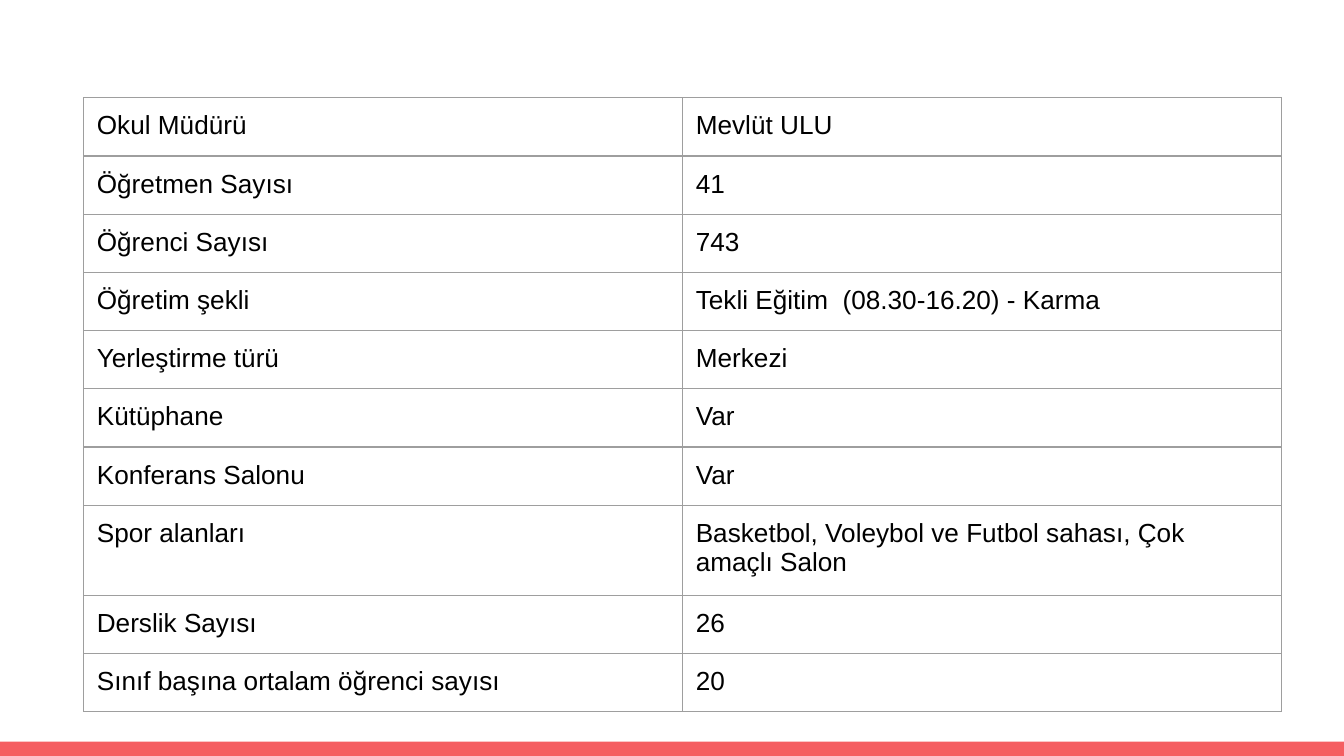
from lxml.etree import SubElement
from pptx import Presentation
from pptx.dml.color import RGBColor
from pptx.enum.shapes import MSO_SHAPE as Shape
from pptx.oxml.ns import qn
from pptx.util import Cm, Pt

WHITE = RGBColor(0xFF, 0xFF, 0xFF)
BLACK = RGBColor(0x00, 0x00, 0x00)
CORAL = RGBColor(0xF5, 0x5E, 0x61)
GRAY = RGBColor(0x9E, 0x9E, 0x9E)

SCHOOL_FACTS = [
    ("Okul Müdürü", "Mevlüt ULU"),
    ("Öğretmen Sayısı", "41"),
    ("Öğrenci Sayısı", "743"),
    ("Öğretim şekli", "Tekli Eğitim  (08.30-16.20) - Karma"),
    ("Yerleştirme türü", "Merkezi"),
    ("Kütüphane", "Var"),
    ("Konferans Salonu", "Var"),
    ("Spor alanları", "Basketbol, Voleybol ve Futbol sahası, Çok amaçlı Salon"),
    ("Derslik Sayısı", "26"),
    ("Sınıf başına ortalam öğrenci sayısı", "20"),
]
TALL_ROW = 7


class SlideBuilder:
    font_name = "Arial"
    font_size = Pt(14)
    cell_margin = Cm(0.25)
    border_width = Pt(0.75)

    def __init__(self, slide):
        self.slide = slide

    def bar(self, left, top, width, height, color):
        bar = self.slide.shapes.add_shape(Shape.RECTANGLE, left, top, width, height)
        bar.shadow.inherit = False
        bar.fill.solid()
        bar.fill.fore_color.rgb = color
        bar.line.fill.background()

    def table(self, left, top, column_width, row_heights, rows):
        columns = len(rows[0])
        table = self.slide.shapes.add_table(
            len(rows), columns, left, top, column_width * columns, sum(row_heights)
        ).table
        table.first_row = False
        table.horz_banding = False
        for column in table.columns:
            column.width = column_width
        for row, height, texts in zip(table.rows, row_heights, rows):
            row.height = height
            for cell, text in zip(row.cells, texts):
                self.cell(cell, text)

    def cell(self, cell, text):
        cell.margin_left = cell.margin_right = self.cell_margin
        cell.margin_top = cell.margin_bottom = self.cell_margin
        cell.text_frame.text = text
        font = cell.text_frame.paragraphs[0].runs[0].font
        font.name = self.font_name
        font.size = self.font_size
        font.color.rgb = BLACK
        self.borders(cell)
        cell.fill.solid()
        cell.fill.fore_color.rgb = WHITE

    def borders(self, cell):
        properties = cell._tc.get_or_add_tcPr()
        for side in ("a:lnL", "a:lnR", "a:lnT", "a:lnB"):
            line = SubElement(properties, qn(side), w=str(self.border_width))
            fill = SubElement(line, qn("a:solidFill"))
            SubElement(fill, qn("a:srgbClr"), val=str(GRAY))


def main():
    presentation = Presentation()
    presentation.slide_width = Cm(25.4)
    presentation.slide_height = Cm(14.29)
    builder = SlideBuilder(presentation.slides.add_slide(presentation.slide_layouts[6]))

    bar_height = Cm(0.27)
    builder.bar(0, presentation.slide_height - bar_height,
                presentation.slide_width, bar_height, CORAL)

    row_heights = [Cm(1.1)] * len(SCHOOL_FACTS)
    row_heights[TALL_ROW] = Cm(1.7)
    builder.table(Cm(1.58), Cm(1.85), Cm(11.32), row_heights, SCHOOL_FACTS)

    presentation.save("out.pptx")


if __name__ == "__main__":
    main()
